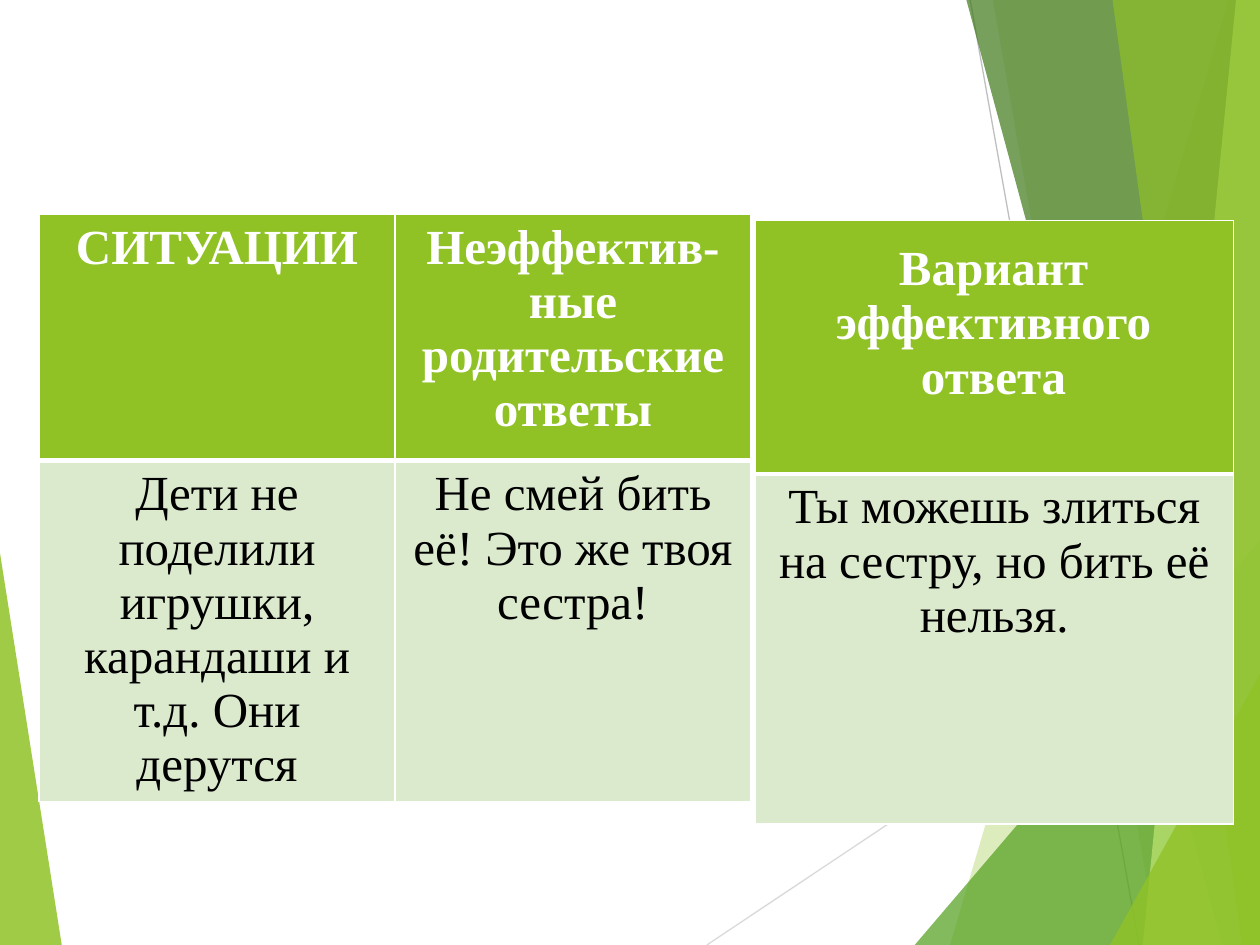
import pptx
import pptx.dml.color
import pptx.enum.text
import pptx.oxml.ns
import pptx.util
from lxml import etree

COLS, ROWS = 100, 75  # slide grid
UNIT = pptx.util.Inches(0.1)
FONT = "Times New Roman"
WHITE, BLACK, GREEN, PALE = "FFFFFF", "000000", "90C226", "DBE9CD"


def grid(n):
    return pptx.util.Emu(round(n * UNIT))


def rgb(color):
    return pptx.dml.color.RGBColor.from_string(color)


def sub(parent, tag, **attrs):
    return etree.SubElement(parent, pptx.oxml.ns.qn(tag), **attrs)


def add_facet(slide, box, points, color, opacity):
    """Translucent polygon; points are shares of the box."""
    x, y, w, h = box
    pts = [(grid(x + px * w), grid(y + py * h)) for px, py in points]
    builder = slide.shapes.build_freeform(*pts[0], scale=1.0)
    builder.add_line_segments(pts[1:], close=True)
    sp = builder.convert_to_shape()
    sp.shadow.inherit = False
    sp.fill.solid()
    sp.fill.fore_color.rgb = rgb(color)
    sp.line.fill.background()
    clr = sp.fill._xPr.find(".//" + pptx.oxml.ns.qn("a:srgbClr"))
    sub(clr, "a:alpha", val=str(opacity * 1000))


def add_thin_line(slide, start, end, color):
    line = slide.shapes.add_connector(1, *map(grid, start + end))
    line.line.color.rgb = rgb(color)
    line.line.width = pptx.util.Pt(0.75)
    sub(line._element.spPr, "a:effectLst")


def add_backdrop(slide, box):
    x, y, w, h = box
    right, bottom = x + w, y + h
    add_facet(slide, (x, y + 43.9, 4.9, h - 43.9), [(0, 0), (1, 1), (0, 1)], GREEN, 85)
    add_thin_line(slide, (x + 56.1, bottom), (right, y + 45.7), "D9D9D9")
    add_thin_line(slide, (x + 77, y), (x + 90.4, bottom), "BFBFBF")
    # Facets on the right edge: left side at top and bottom, top row, colour, opacity
    facets = [
        (97.5, 75.4, 0, GREEN, 30),
        (78.8, 91.9, 0, GREEN, 20),
        (100, 72.6, 42.9, "54A021", 72),
        (76.7, 97, 0, "3F7819", 70),
        (98.1, 90.7, 0, "C0E474", 70),
        (88.3, 98.6, 0, GREEN, 65),
        (100, 88.1, 53.5, GREEN, 80),
    ]
    for top_x, bottom_x, top, color, opacity in facets:
        points = [(top_x / w, 0), (bottom_x / w, 1), (1, 1), (1, 0)]
        if top_x == w:
            points.pop()
        add_facet(slide, (x, y + top, w, h - top), points, color, opacity)


def set_borders(cell, widths):
    """White borders, widths in points for left, right, top, bottom; 0 is none."""
    tc_pr = cell._tc.get_or_add_tcPr()
    for side, width in zip("LRTB", widths):
        ln = sub(tc_pr, "a:ln" + side, w=str(pptx.util.Pt(width)))
        if width:
            sub(sub(ln, "a:solidFill"), "a:srgbClr", val=WHITE)
        else:
            sub(ln, "a:noFill")


def add_answer_table(slide, box, rows, row_shares, bordered=True):
    """Table whose first row is a green header."""
    x, y, w, h = box
    count = len(rows[0])
    frame = slide.shapes.add_table(len(rows), count, *map(grid, box))
    table = frame.table
    for col in table.columns:
        col.width = grid(w / count)
    for i, (texts, share) in enumerate(zip(rows, row_shares)):
        table.rows[i].height = grid(h * share)
        header = i == 0
        for j, text in enumerate(texts):
            cell = table.cell(i, j)
            edges = (1, 1, 1, 3) if header else (1, 1, 3, 1)
            set_borders(cell, edges if bordered else (0, 0, 0, 0))
            cell.fill.solid()
            cell.fill.fore_color.rgb = rgb(GREEN if header else PALE)
            p = cell.text_frame.paragraphs[0]
            p.text = text
            p.alignment = pptx.enum.text.PP_ALIGN.CENTER
            p.font.name = FONT
            p.font.size = pptx.util.Pt(28)
            p.font.bold = header
            p.font.color.rgb = rgb(WHITE if header else BLACK)


def main():
    prs = pptx.Presentation()
    prs.slide_width, prs.slide_height = grid(COLS), grid(ROWS)
    slide = prs.slides.add_slide(prs.slide_layouts[6])
    add_backdrop(slide, (0, 0, COLS, ROWS))
    add_answer_table(
        slide, (3.1, 17, 56.5, 46.6),
        [("СИТУАЦИИ", "Неэффектив-ные родительские ответы"),
         ("Дети не поделили игрушки, карандаши и т.д. Они дерутся",
          "Не смей бить её! Это же твоя сестра!")],
        (0.42, 0.58))
    add_answer_table(
        slide, (59.9, 17.5, 38, 47.9),
        [("",), ("Ты можешь злиться на сестру, но бить её нельзя.",)],
        (0.42, 0.58))
    add_answer_table(
        slide, (60.9, 18.7, 35.9, 15),
        [("Вариант эффективного ответа",)], (1,), bordered=False)
    prs.save("out.pptx")


if __name__ == "__main__":
    main()
